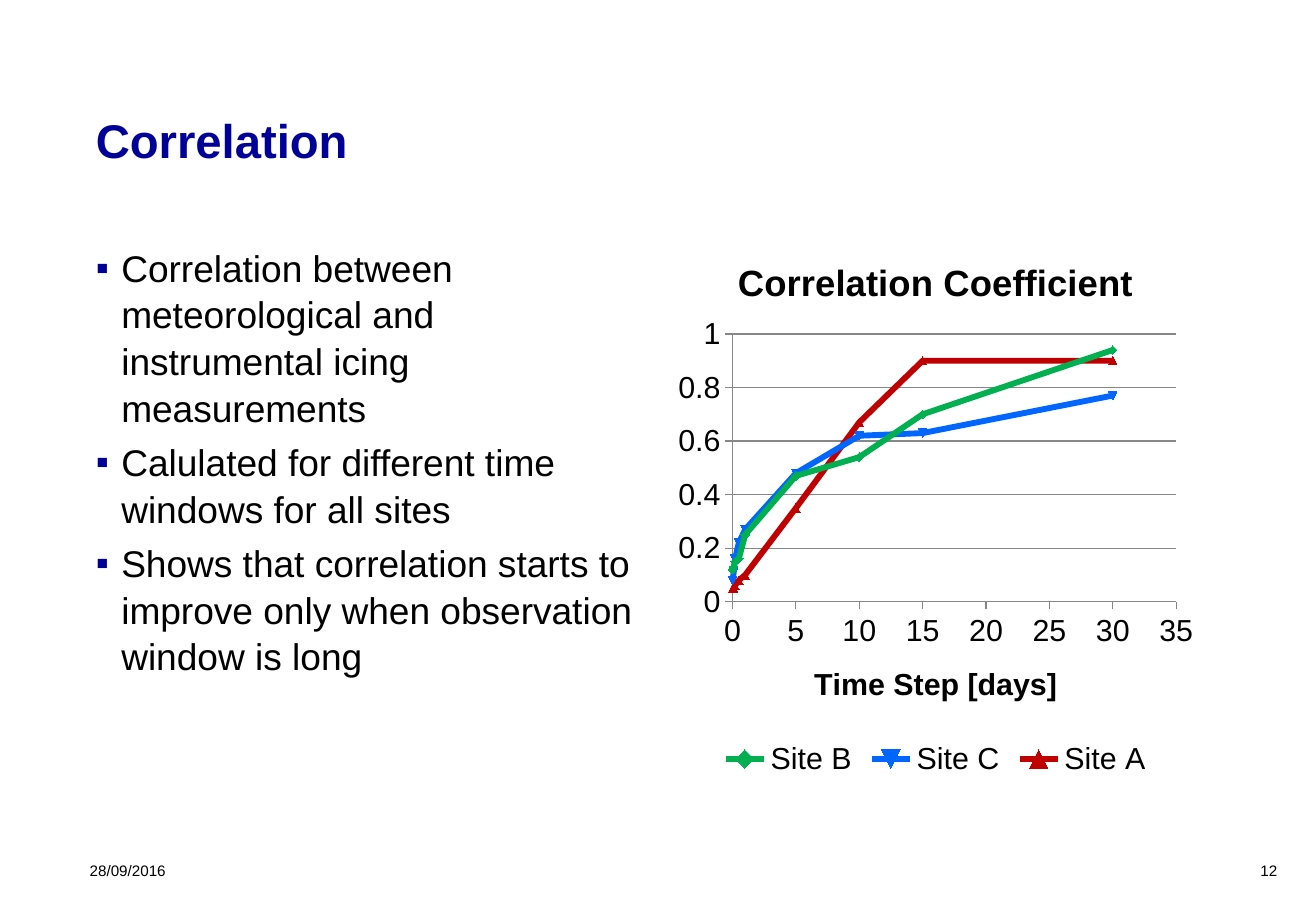
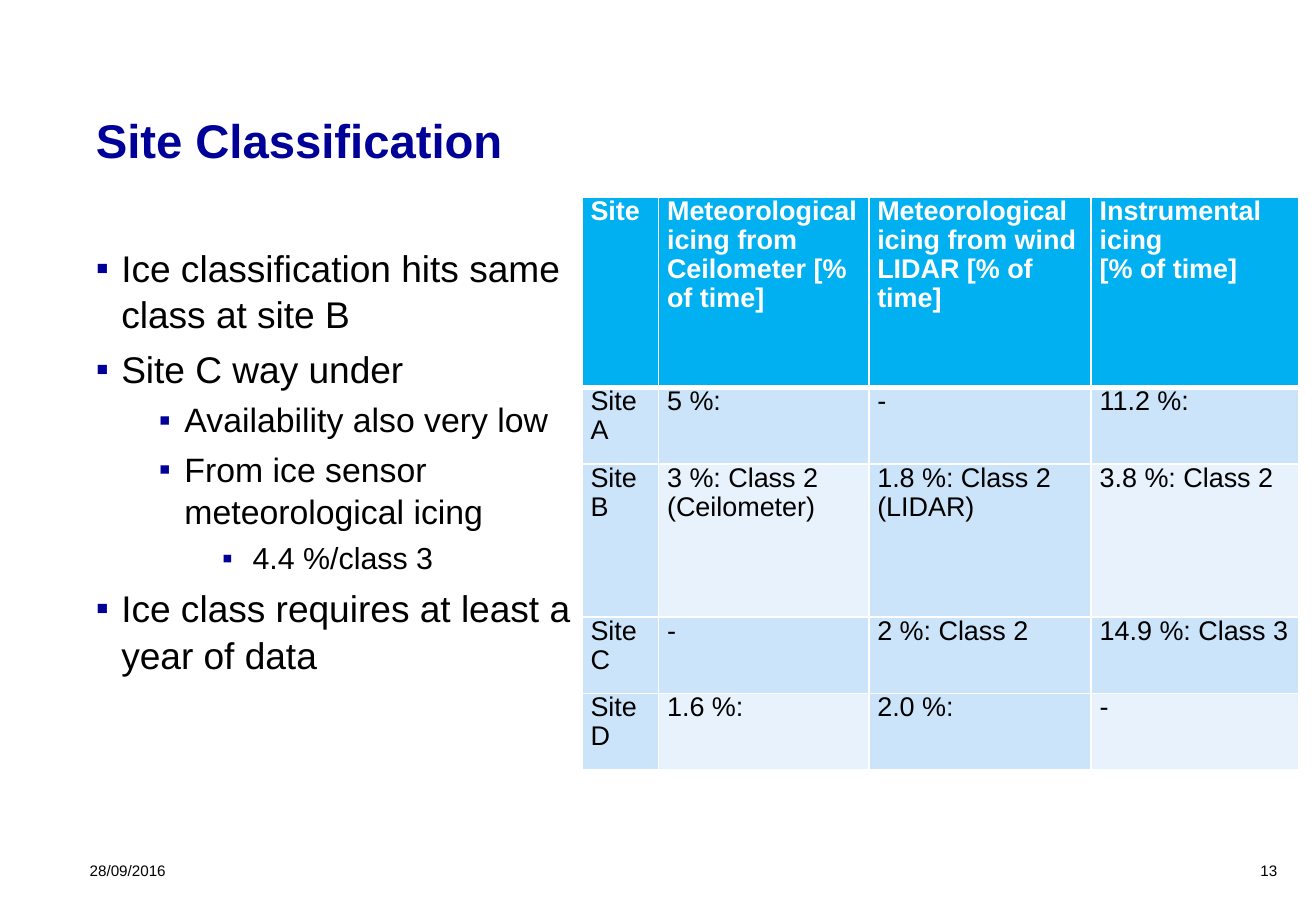
from dataclasses import dataclass

import pptx
import pptx.chart.data
import pptx.dml.color
import pptx.enum.chart
import pptx.enum.text
import pptx.oxml
import pptx.oxml.ns
import pptx.util

Inches, Pt = pptx.util.Inches, pptx.util.Pt
FONT = "Arial"
NAVY, BLACK, WHITE, GREY = "000099", "000000", "FFFFFF", "878787"
HEADER, BAND, LIGHT = "00B0F0", "CCE4F9", "E7F2FC"
DATE = "28/09/2016"
NS = pptx.oxml.ns.nsdecls("a")


@dataclass
class Level:
    size: float
    left: float
    hang: float


@dataclass
class Bullet:
    text: str
    level: int = 0


@dataclass
class Site:
    name: str
    color: str
    values: tuple[float, ...]


LEVELS = (Level(22, 0.21, 0.21), Level(20, 0.73, 0.21), Level(18, 1.29, 0.25))

CORRELATION_BULLETS = [
    Bullet("Correlation between meteorological and instrumental icing measurements"),
    Bullet("Calulated for different time windows for all sites"),
    Bullet("Shows that correlation starts to improve only when observation window is long"),
]
CLASS_BULLETS = [
    Bullet("Ice classification hits same class at site B"),
    Bullet("Site C way under"),
    Bullet("Availability also very low", 1),
    Bullet("From ice sensor meteorological icing", 1),
    Bullet("4.4 %/class 3", 2),
    Bullet("Ice class requires at least a year of data"),
]

DAYS = (0, 0.1, 0.2, 0.5, 1, 5, 10, 15, 30)
SITES = [
    Site("Site B", "00B050", (0.12, 0.13, 0.15, 0.16, 0.25, 0.47, 0.54, 0.7, 0.94)),
    Site("Site C", "0066FF", (0.08, 0.11, 0.16, 0.22, 0.27, 0.48, 0.62, 0.63, 0.77)),
    Site("Site A", "C00000", (0.05, 0.05, 0.06, 0.08, 0.1, 0.35, 0.67, 0.9, 0.9)),
]

COL_WIDTHS = (0.63, 1.73, 1.83, 1.71)
ROW_HEIGHTS = (1.57, 0.63, 1.26, 0.63, 0.63)
ICING_ROWS = [
    ("Site", "Meteorological icing from Ceilometer [% of time]",
     "Meteorological icing from wind LIDAR [% of time]", "Instrumental icing\n[% of time]"),
    ("Site A", "5 %:", "-", "11.2 %:"),
    ("Site B", "3 %: Class 2 (Ceilometer)", "1.8 %: Class 2 (LIDAR)", "3.8 %: Class 2"),
    ("Site C", "-", "2 %: Class 2", "14.9 %: Class 3"),
    ("Site D", "1.6 %:", "2.0 %:", "-"),
]


def rgb(color: str) -> pptx.dml.color.RGBColor:
    return pptx.dml.color.RGBColor.from_string(color)


def style(font, size: float, color: str = BLACK, bold: bool = False) -> None:
    font.name, font.size, font.bold = FONT, Pt(size), bold
    font.color.rgb = rgb(color)


def add_text(s, text: str, left: float, top: float, width: float, height: float,
             size: float, color: str = BLACK, bold: bool = False):
    tf = s.shapes.add_textbox(Inches(left), Inches(top), Inches(width), Inches(height)).text_frame
    tf.word_wrap = True
    tf.text = text
    for p in tf.paragraphs:
        for r in p.runs:
            style(r.font, size, color, bold)
    return tf


# Shared parts: title and footer
def new_slide(prs, title: str, number: int):
    s = prs.slides.add_slide(prs.slide_layouts[6])
    tf = add_text(s, title, 0.69, 0.83, 9.21, 1.03, 28, NAVY, True)
    tf.margin_top = Inches(0.09)
    aligns = pptx.enum.text.PP_ALIGN
    for text, left, align in ((DATE, 0.64, aligns.LEFT), (str(number), 8.28, aligns.RIGHT)):
        tf = add_text(s, text, left, 6.97, 2.33, 0.4, 9)
        tf.vertical_anchor = pptx.enum.text.MSO_ANCHOR.MIDDLE
        tf.paragraphs[0].alignment = align
    return s


def add_bullets(s, bullets: list[Bullet]) -> None:
    tf = add_text(s, "\n".join(b.text for b in bullets), 0.69, 1.94, 4.64, 4.5, LEVELS[0].size)
    tf.margin_top = Inches(0.06)
    for i, (p, bullet) in enumerate(zip(tf.paragraphs, bullets)):
        level = LEVELS[bullet.level]
        p.level = bullet.level
        p.line_spacing = 1.05
        p.space_before = Pt(0.2 * level.size if i else 0)
        pPr = p._p.get_or_add_pPr()
        pPr.set("marL", str(Inches(level.left)))
        pPr.set("indent", str(-Inches(level.hang)))
        for xml in (f'<a:buClr {NS}><a:srgbClr val="{NAVY}"/></a:buClr>',
                    f'<a:buFont {NS} typeface="{FONT}"/>',
                    f'<a:buChar {NS} char="▪"/>'):
            pPr.append(pptx.oxml.parse_xml(xml))
        p.runs[0].font.size = Pt(level.size)


# Correlation chart
def set_plot_area(chart, x: float, y: float, w: float, h: float) -> None:
    area = chart._chartSpace.chart.plotArea
    for old in area.findall(pptx.oxml.ns.qn("c:layout")):
        area.remove(old)
    sizes = "".join(f'<c:{k} val="{v}"/>' for k, v in zip("xywh", (x, y, w, h)))
    area.insert(0, pptx.oxml.parse_xml(
        f'<c:layout {pptx.oxml.ns.nsdecls("c")}><c:manualLayout><c:layoutTarget val="inner"/>'
        f'<c:xMode val="edge"/><c:yMode val="edge"/>{sizes}</c:manualLayout></c:layout>'))


def set_title(owner, text: str, size: float) -> None:
    tf = owner.text_frame
    tf.text = text
    style(tf.paragraphs[0].runs[0].font, size, BLACK, True)


def set_axis(axis, top: float, step: float, grid: bool) -> None:
    axis.minimum_scale, axis.maximum_scale, axis.major_unit = 0, top, step
    axis.has_major_gridlines = grid
    axis.major_tick_mark = pptx.enum.chart.XL_TICK_MARK.OUTSIDE
    axis.tick_labels.number_format = "General"
    axis.tick_labels.number_format_is_linked = False
    lines = [axis.format.line] + ([axis.major_gridlines.format.line] if grid else [])
    for line in lines:
        line.color.rgb = rgb(GREY)
        line.width = Pt(0.75)


def add_correlation_chart(s) -> None:
    data = pptx.chart.data.XyChartData()
    for site in SITES:
        series = data.add_series(site.name)
        for day, value in zip(DAYS, site.values):
            series.add_data_point(day, value)
    chart = s.shapes.add_chart(pptx.enum.chart.XL_CHART_TYPE.XY_SCATTER_SMOOTH, Inches(5.5),
                               Inches(1.94), Inches(4.4), Inches(4.5), data).chart
    style(chart.font, 18)
    chart.has_title = True
    set_title(chart.chart_title, "Correlation Coefficient", 21.6)
    set_axis(chart.category_axis, 35, 5, False)
    set_axis(chart.value_axis, 1, 0.2, True)
    set_title(chart.category_axis.axis_title, "Time Step [days]", 18)
    set_plot_area(chart, 0.12, 0.18, 0.83, 0.49)
    chart.has_legend = True
    chart.legend.position = pptx.enum.chart.XL_LEGEND_POSITION.BOTTOM
    chart.legend.include_in_layout = False
    chart.plots[0].vary_by_categories = False
    for series, site in zip(chart.plots[0].series, SITES):
        series.smooth = True
        series.format.line.color.rgb = rgb(site.color)
        series.format.line.width = Pt(3.5)
        marker = series.marker
        marker.style = pptx.enum.chart.XL_MARKER_STYLE.AUTOMATIC
        marker.size = 5
        marker.format.fill.solid()
        marker.format.fill.fore_color.rgb = rgb(site.color)
        marker.format.line.color.rgb = rgb(site.color)


# Icing table
def set_borders(cell, bottom: float) -> None:
    tcPr = cell._tc.get_or_add_tcPr()
    for i, (side, width) in enumerate(zip("LRTB", (1, 1, 1, bottom))):
        tcPr.insert(i, pptx.oxml.parse_xml(
            f'<a:ln{side} {NS} w="{Pt(width)}"><a:solidFill><a:srgbClr val="{WHITE}"/>'
            f'</a:solidFill></a:ln{side}>'))


def add_icing_table(s) -> None:
    table = s.shapes.add_table(len(ROW_HEIGHTS), len(COL_WIDTHS), Inches(4.79), Inches(1.62),
                               Inches(sum(COL_WIDTHS)), Inches(sum(ROW_HEIGHTS))).table
    for column, width in zip(table.columns, COL_WIDTHS):
        column.width = Inches(width)
    for i, (height, texts) in enumerate(zip(ROW_HEIGHTS, ICING_ROWS)):
        table.rows[i].height = Inches(height)
        head = i == 0
        for j, text in enumerate(texts):
            cell = table.cell(i, j)
            cell.margin_left = cell.margin_right = Inches(0.07)
            cell.margin_top = cell.margin_bottom = 0
            checked = i > 0 and i % 2 == 0 and j % 2 == 1
            cell.fill.solid()
            cell.fill.fore_color.rgb = rgb(HEADER if head else LIGHT if checked else BAND)
            # The heavy rule under the header belongs to both rows
            set_borders(cell, 3 if head else 1)
            cell.text_frame.text = text
            for p in cell.text_frame.paragraphs:
                p.line_spacing = 0.97
                style(p.runs[0].font, 16, WHITE if head else BLACK, head)


def main() -> None:
    prs = pptx.Presentation()
    prs.slide_width, prs.slide_height = Inches(10.83), Inches(7.5)

    s = new_slide(prs, "Correlation", 12)
    add_bullets(s, CORRELATION_BULLETS)
    add_correlation_chart(s)

    s = new_slide(prs, "Site Classification", 13)
    add_bullets(s, CLASS_BULLETS)
    add_icing_table(s)

    prs.save("out.pptx")


if __name__ == "__main__":
    main()
